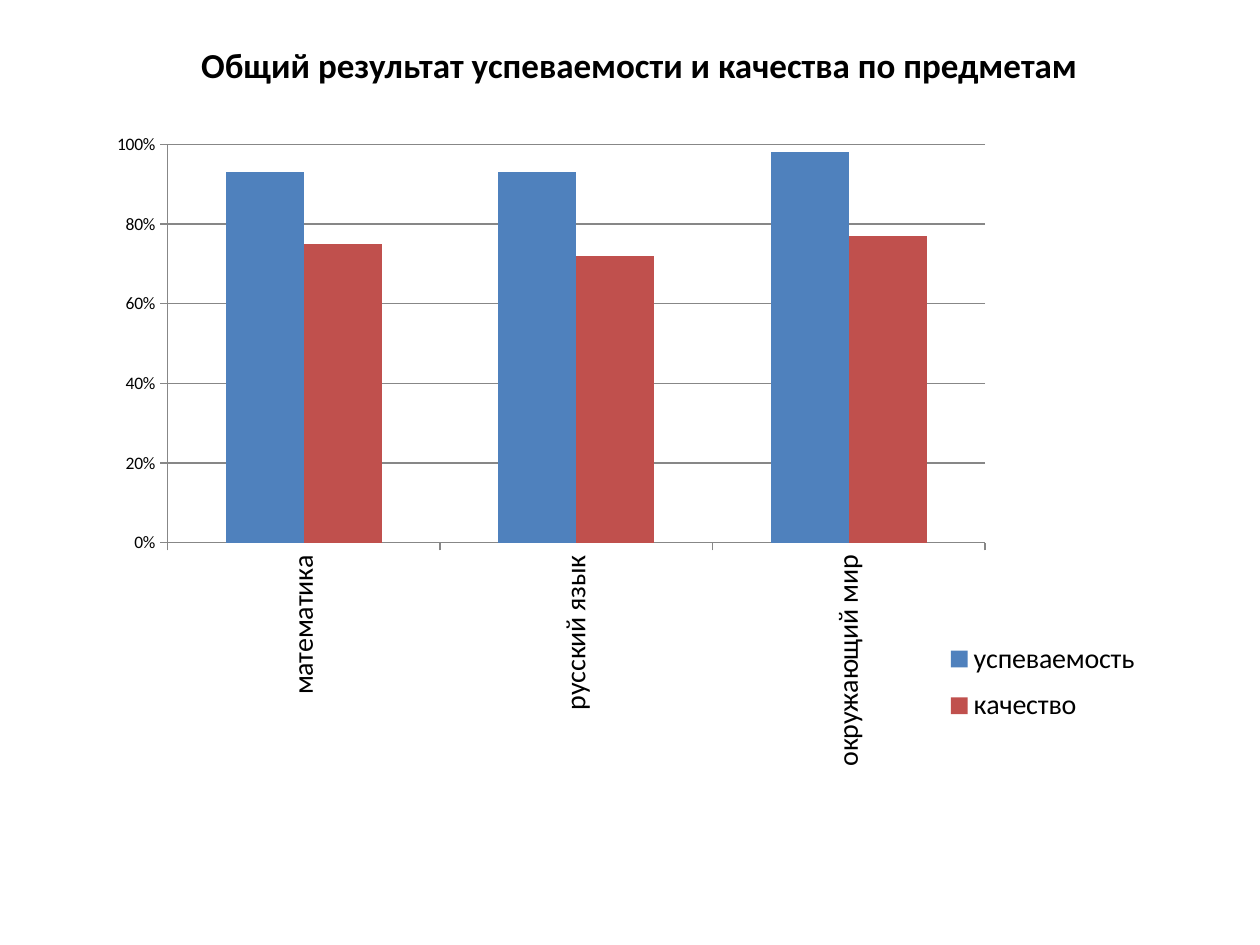
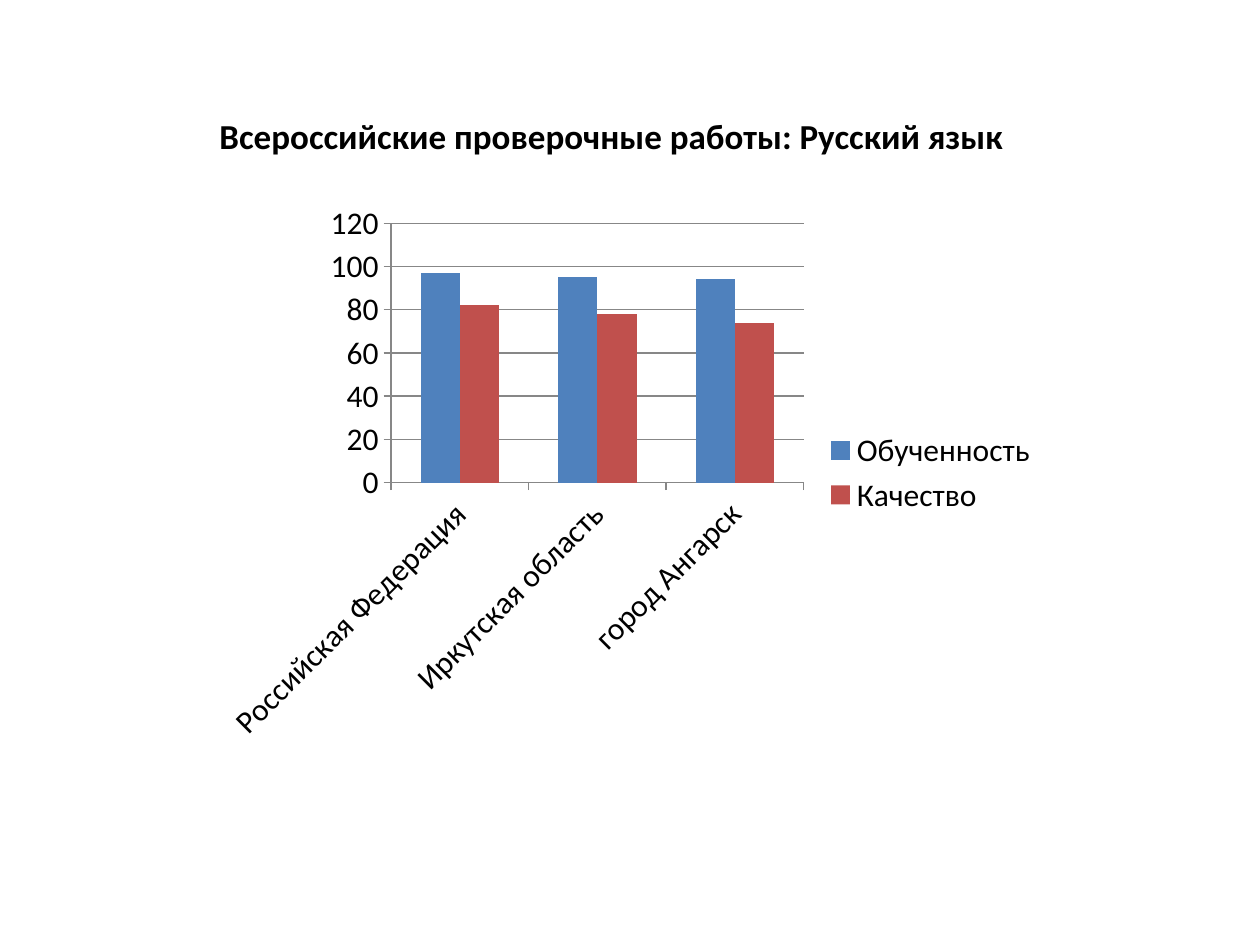
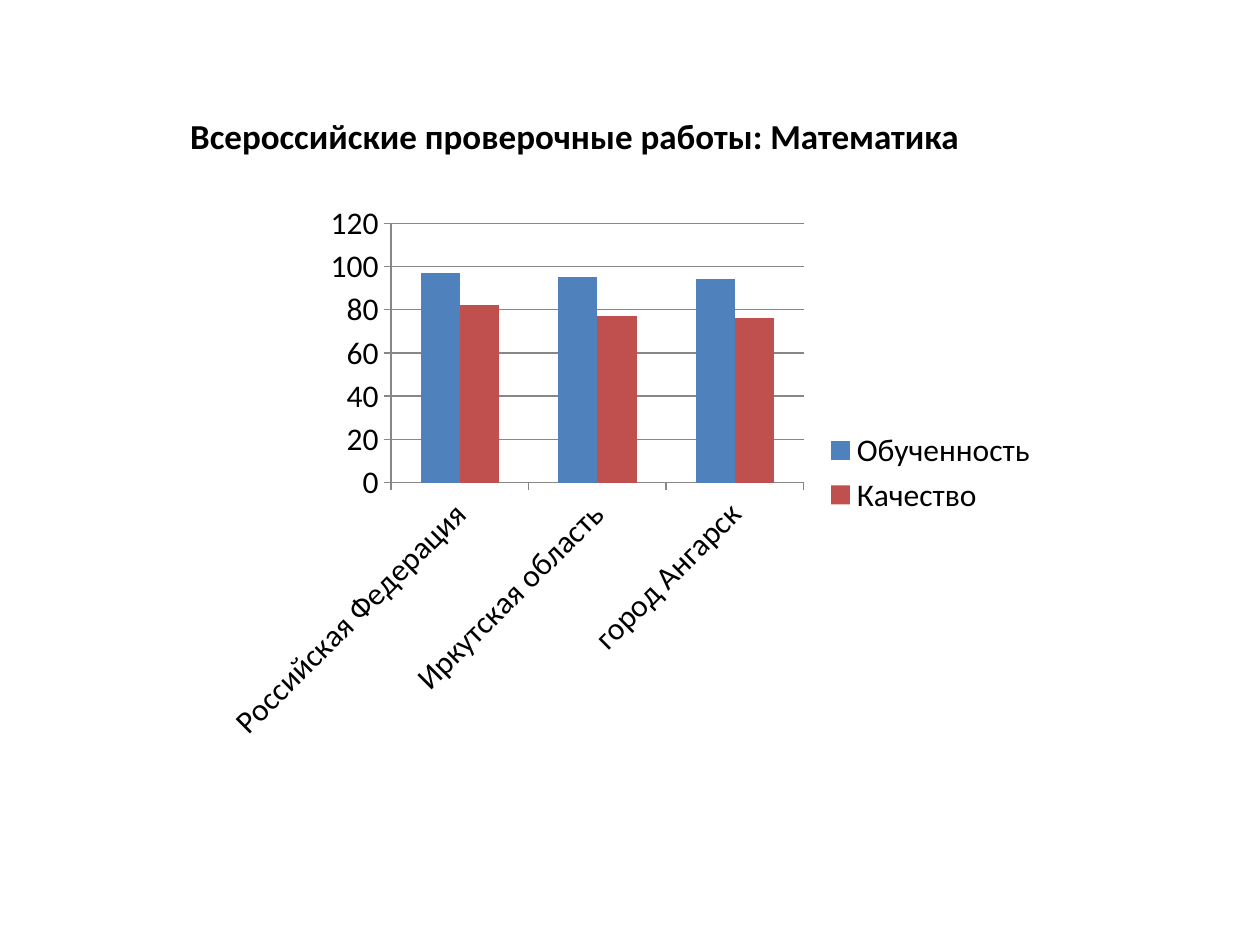
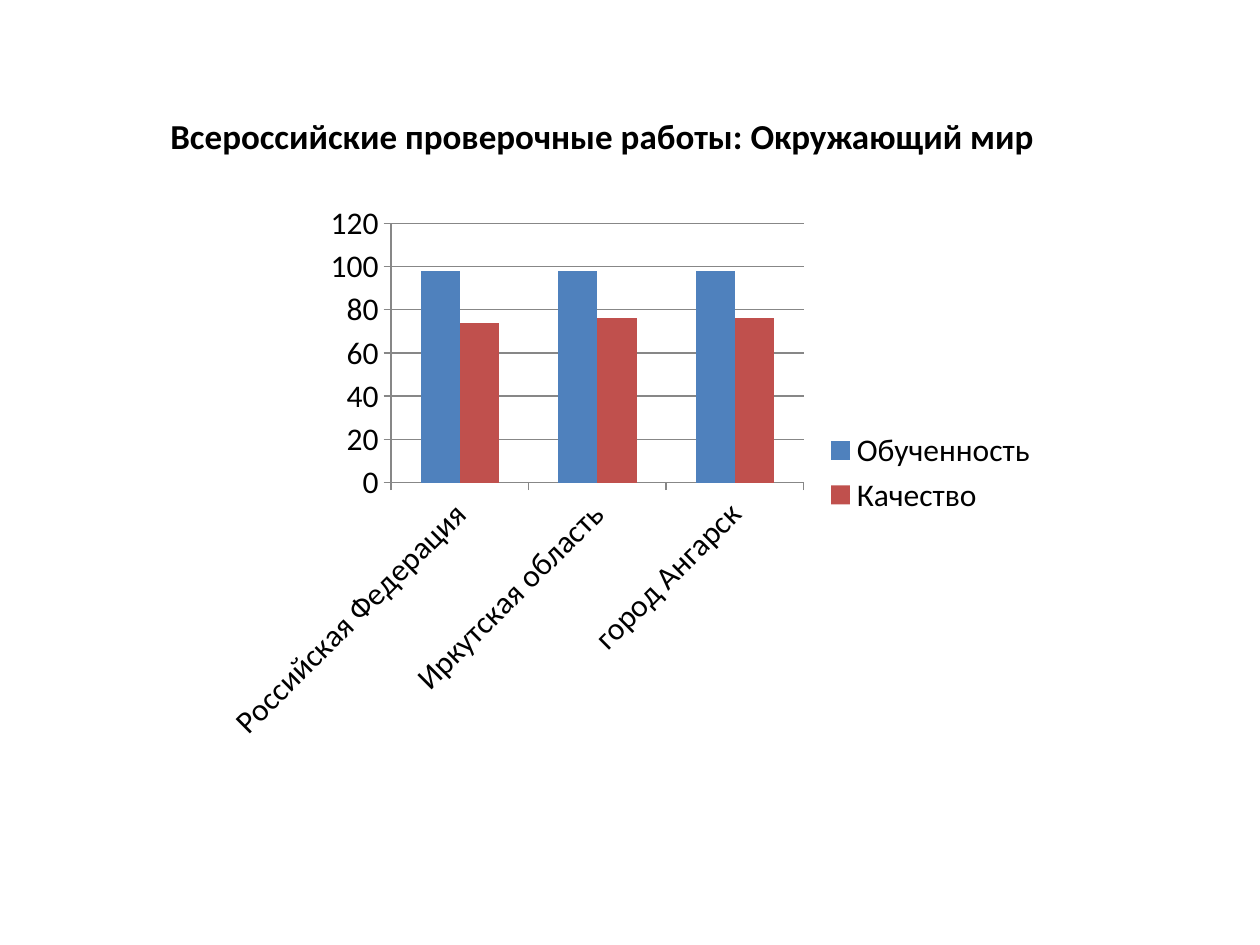
"""Build four slides of school test results as clustered column charts."""
from lxml.etree import SubElement
from pptx import Presentation
from pptx.chart.data import CategoryChartData as ChartData
from pptx.dml.color import RGBColor as Rgb
from pptx.enum.chart import XL_CHART_TYPE as ChartKind, XL_LEGEND_POSITION as LegendPlace
from pptx.enum.chart import XL_TICK_MARK as Tick
from pptx.enum.text import MSO_ANCHOR as Anchor, MSO_AUTO_SIZE as AutoSize, PP_ALIGN as Align
from pptx.oxml.ns import qn
from pptx.util import Cm, Pt

COLORS = {"text": "000000", "first": "4F81BD", "second": "C0504D", "line": "878787"}
FONT = "Calibri"
TITLE_FRAME = {"word_wrap": True, "vertical_anchor": Anchor.TOP,
               "auto_size": AutoSize.SHAPE_TO_FIT_TEXT}
TITLE_FONT = {"name": FONT, "size": Pt(20), "bold": True}
CHART_FORMAT = {"has_title": False, "has_legend": True}
LEGEND_FORMAT = {"position": LegendPlace.RIGHT, "include_in_layout": False}
AXIS_FORMAT = {"major_tick_mark": Tick.OUTSIDE, "minor_tick_mark": Tick.NONE}
PLOT_FORMAT = {"gap_width": 150, "overlap": 0, "vary_by_categories": False}
PERCENT_AXIS = {"minimum_scale": 0, "maximum_scale": 1, "major_unit": 0.2}

SUBJECTS = ["математика", "русский язык", "окружающий мир"]
REGIONS = ["Российская Федерация", "Иркутская область", "город Ангарск"]
TEST_SERIES = ["Обученность", "Качество"]
TEST_BOX = (4.24, 3.89, 16.94, 11.28)
TEST_TITLE = "Всероссийские проверочные работы: "

PAGES = [
    {"title": "Общий результат успеваемости и качества по предметам",
     "title_box": (0.89, 0.74, 24, 1.12), "align": Align.CENTER,
     "chart_box": (2.11, 2.51, 21.13, 13.39), "categories": SUBJECTS,
     "names": ["успеваемость", "качество"],
     "values": [(0.93, 0.93, 0.98), (0.75, 0.72, 0.77)], "percent": True},
]
for subject, left, width, values in [
    ("Русский язык", 4.17, 17.65, [(97, 95, 94), (82, 78, 74)]),
    ("Математика", 3.58, 16.08, [(97, 95, 94), (82, 77, 76)]),
    ("Окружающий мир", 3.18, 18.92, [(98, 98, 98), (74, 76, 76)]),
]:
    PAGES.append({"title": TEST_TITLE + subject, "title_box": (left, 2.18, width, 1.12),
                  "align": Align.LEFT, "chart_box": TEST_BOX, "categories": REGIONS,
                  "names": TEST_SERIES, "values": values, "percent": False})


def apply(target, formats):
    """Set every attribute named in formats on target."""
    for name, value in formats.items():
        setattr(target, name, value)


def place(parent, index, box, inner=False):
    """Give a chart part a manual layout in fractions of the chart."""
    for old in parent.findall(qn("c:layout")):
        parent.remove(old)
    layout = SubElement(parent, qn("c:layout"))
    parent.insert(index, layout)
    manual = SubElement(layout, qn("c:manualLayout"))
    settings = [("layoutTarget", "inner")] if inner else []
    settings += [("xMode", "edge"), ("yMode", "edge"), *zip("xywh", box)]
    for tag, value in settings:
        SubElement(manual, qn(f"c:{tag}")).set("val", str(value))


deck = Presentation()
apply(deck, {"slide_width": Cm(25.4), "slide_height": Cm(19.05)})

for content in PAGES:
    page = deck.slides.add_slide(deck.slide_layouts[5])
    title = page.shapes.title
    apply(title, dict(zip(("left", "top", "width", "height"), map(Cm, content["title_box"]))))
    apply(title.text_frame, TITLE_FRAME)
    para = title.text_frame.paragraphs[0]
    para.alignment = content["align"]
    span = para.add_run()
    span.text = content["title"]
    apply(span.font, TITLE_FONT)
    span.font.color.rgb = Rgb.from_string(COLORS["text"])

    data = ChartData(number_format="0%" if content["percent"] else "General")
    data.categories = content["categories"]
    for name, values in zip(content["names"], content["values"]):
        data.add_series(name, values)
    box = map(Cm, content["chart_box"])
    chart = page.shapes.add_chart(ChartKind.COLUMN_CLUSTERED, *box, data).chart
    apply(chart, CHART_FORMAT)
    apply(chart.font, {"name": FONT, "size": Pt(10 if content["percent"] else 18)})
    chart.font.color.rgb = Rgb.from_string(COLORS["text"])
    apply(chart.legend, LEGEND_FORMAT)

    plot = chart.plots[0]
    apply(plot, PLOT_FORMAT)
    for series, key in zip(plot.series, ("first", "second")):
        series.format.fill.solid()
        series.format.fill.fore_color.rgb = Rgb.from_string(COLORS[key])

    category_axis, value_axis = chart.category_axis, chart.value_axis
    value_axis.has_major_gridlines = True
    for axis in (category_axis, value_axis):
        apply(axis, AXIS_FORMAT)
    for part in (category_axis, value_axis, value_axis.major_gridlines):
        part.format.line.width = Pt(0.75)
        part.format.line.color.rgb = Rgb.from_string(COLORS["line"])

    if content["percent"]:
        apply(value_axis, PERCENT_AXIS)
        apply(value_axis.tick_labels, {"number_format": "0%", "number_format_is_linked": False})
        for font in (category_axis.tick_labels.font, chart.legend.font):
            apply(font, {"name": FONT, "size": Pt(16)})
            font.color.rgb = Rgb.from_string(COLORS["text"])
        label_body = category_axis._element.find(qn("c:txPr")).find(qn("a:bodyPr"))
        apply_rotation = {"rot": "-5400000", "vert": "horz"}
        for name, value in apply_rotation.items():
            label_body.set(name, value)
        place(chart._chartSpace.find(f".//{qn('c:plotArea')}"), 0, (0.06, 0.03, 0.78, 0.6), True)
        place(chart.legend._element, 1, (0.79, 0.76, 0.21, 0.16))

deck.save("out.pptx")
